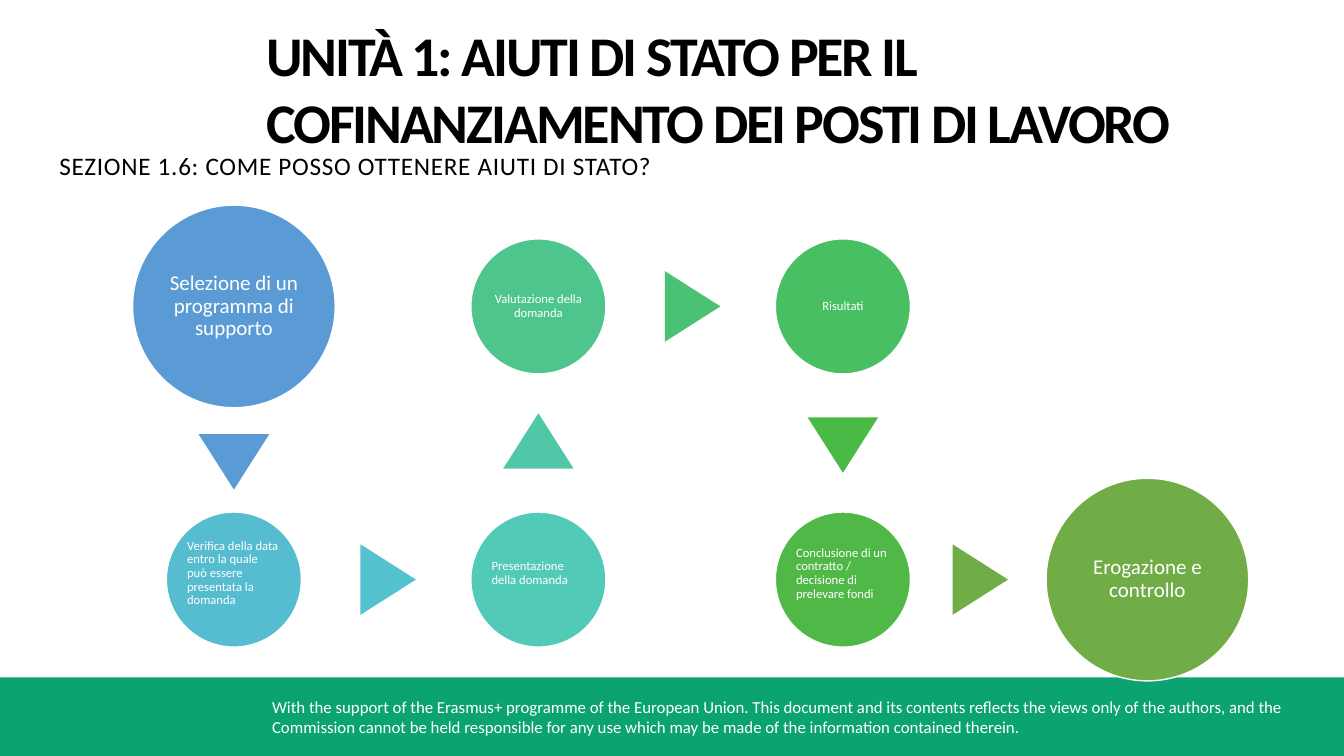
from pptx import Presentation
from pptx.dml.color import RGBColor
from pptx.enum.shapes import MSO_SHAPE
from pptx.enum.text import MSO_ANCHOR, PP_ALIGN
from pptx.util import Inches, Pt

TITLE = "UNITÀ 1: AIUTI DI STATO PER IL COFINANZIAMENTO DEI POSTI DI LAVORO"
SECTION = "SEZIONE 1.6: COME POSSO OTTENERE AIUTI DI STATO?"
FOOTER = (
    "With the support of the Erasmus+ programme of the European Union. "
    "This document and its contents reflects the views only of the authors, "
    "and the Commission cannot be held responsible for any use which may be "
    "made of the information contained therein."
)
LEFT, CENTER = PP_ALIGN.LEFT, PP_ALIGN.CENTER
SMALL, LARGE = 1.34, 2.01

# text, column, row, diameter, font size, alignment, colour
STEPS = [
    ("Selezione di un programma di supporto", 0, 0, LARGE, 15, CENTER, "5B9BD5"),
    ("Verifica della data entro la quale può essere presentata la domanda",
     0, 1, SMALL, 9, LEFT, "56BCD0"),
    ("Presentazione della domanda", 1, 1, SMALL, 9, LEFT, "52CAB8"),
    ("Valutazione della domanda", 1, 0, SMALL, 9, CENTER, "4DC58D"),
    ("Risultati", 2, 0, SMALL, 9, CENTER, "49BF64"),
    ("Conclusione di un contratto / decisione di prelevare fondi",
     2, 1, SMALL, 9, LEFT, "50B846"),
    ("Erogazione e controllo", 3, 1, LARGE, 15, CENTER, "70AD47"),
]
ARROW_COLORS = ["5B9BD5", "55C3CF", "50C8A7", "4BC174", "4ABA46", "70AD47"]

FIRST_COLUMN, COLUMN_STEP = 2.32, 3.02
ROW_CENTERS = [3.04, 5.75]
ARROW_WIDTH, ARROW_HEIGHT = 0.7, 0.55
ARROW_SHIFT = 0.02  # each arrow sits slightly past the middle of its gap
ROTATIONS = {(0, -1): 0, (1, 0): 90, (0, 1): 180}


def color(value):
    return RGBColor.from_string(value)


def set_insets(frame, left, top, right, bottom):
    frame.margin_left, frame.margin_top = Inches(left), Inches(top)
    frame.margin_right, frame.margin_bottom = Inches(right), Inches(bottom)


def write(frame, text, size, text_color, bold=False, spacing=0):
    """Fill a frame with one paragraph; spacing is in points between letters."""
    frame.word_wrap = True
    para = frame.paragraphs[0]
    para.text = text
    span = para.runs[0]
    span.font.name = "Calibri"
    span.font.size = Pt(size)
    span.font.bold = bold
    span.font.color.rgb = color(text_color)
    if spacing:
        span.font._element.set("spc", str(round(spacing * 100)))
    return para


def add_text(page, left, top, width, height):
    return page.shapes.add_textbox(
        Inches(left), Inches(top), Inches(width), Inches(height)).text_frame


def add_filled(page, kind, center_x, center_y, width, height, fill):
    shape = page.shapes.add_shape(
        kind, Inches(center_x - width / 2), Inches(center_y - height / 2),
        Inches(width), Inches(height))
    shape.shadow.inherit = False
    shape.fill.solid()
    shape.fill.fore_color.rgb = color(fill)
    shape.line.fill.background()
    return shape


def step_center(step):
    return FIRST_COLUMN + step[1] * COLUMN_STEP, ROW_CENTERS[step[2]]


def add_step(page, step):
    text, _, _, diameter, size, alignment, fill = step
    circle = add_filled(page, MSO_SHAPE.OVAL, *step_center(step),
                        diameter, diameter, fill)
    circle.line.color.rgb = color("FFFFFF")
    circle.line.width = Pt(1)
    frame = circle.text_frame
    frame.vertical_anchor = MSO_ANCHOR.MIDDLE
    bottom = 0.13 if alignment == LEFT else 0.01
    set_insets(frame, 0.01, 0.01, 0.01, bottom)
    para = write(frame, text, size, "FFFFFF")
    para.alignment = alignment
    para.line_spacing = 0.9


def add_arrow(page, start, end, fill):
    """Put a triangle in the gap between two circles, pointing to the second."""
    direction = (end[1] - start[1], end[2] - start[2])
    offset = (start[3] - end[3]) / 4 + ARROW_SHIFT
    center_x, center_y = (
        (a + b) / 2 + offset * way
        for a, b, way in zip(step_center(start), step_center(end), direction))
    arrow = add_filled(page, MSO_SHAPE.ISOSCELES_TRIANGLE, center_x, center_y,
                       ARROW_WIDTH, ARROW_HEIGHT, fill)
    arrow.rotation = ROTATIONS[direction]


def main():
    deck = Presentation()
    deck.slide_width, deck.slide_height = Inches(13.33), Inches(7.5)
    page = deck.slides.add_slide(deck.slide_layouts[6])

    add_filled(page, MSO_SHAPE.RECTANGLE, 13.33 / 2, 7.11, 13.33, 0.78, "0CA373")
    write(add_text(page, 2.6, 6.86, 10.42, 0.5), FOOTER, 12, "FFFFFF")

    for step in STEPS:
        add_step(page, step)
    for start, end, fill in zip(STEPS, STEPS[1:], ARROW_COLORS):
        add_arrow(page, start, end, fill)

    title = add_text(page, 2.64, 0.19, 8.98, 2.05)
    set_insets(title, 0, 0.01, 0, 0)
    write(title, TITLE, 40, "000000", bold=True, spacing=-1.5)
    write(add_text(page, 0.49, 1.44, 6.66, 0.72), SECTION, 18, "000000", spacing=0.5)

    deck.save("out.pptx")


if __name__ == "__main__":
    main()
